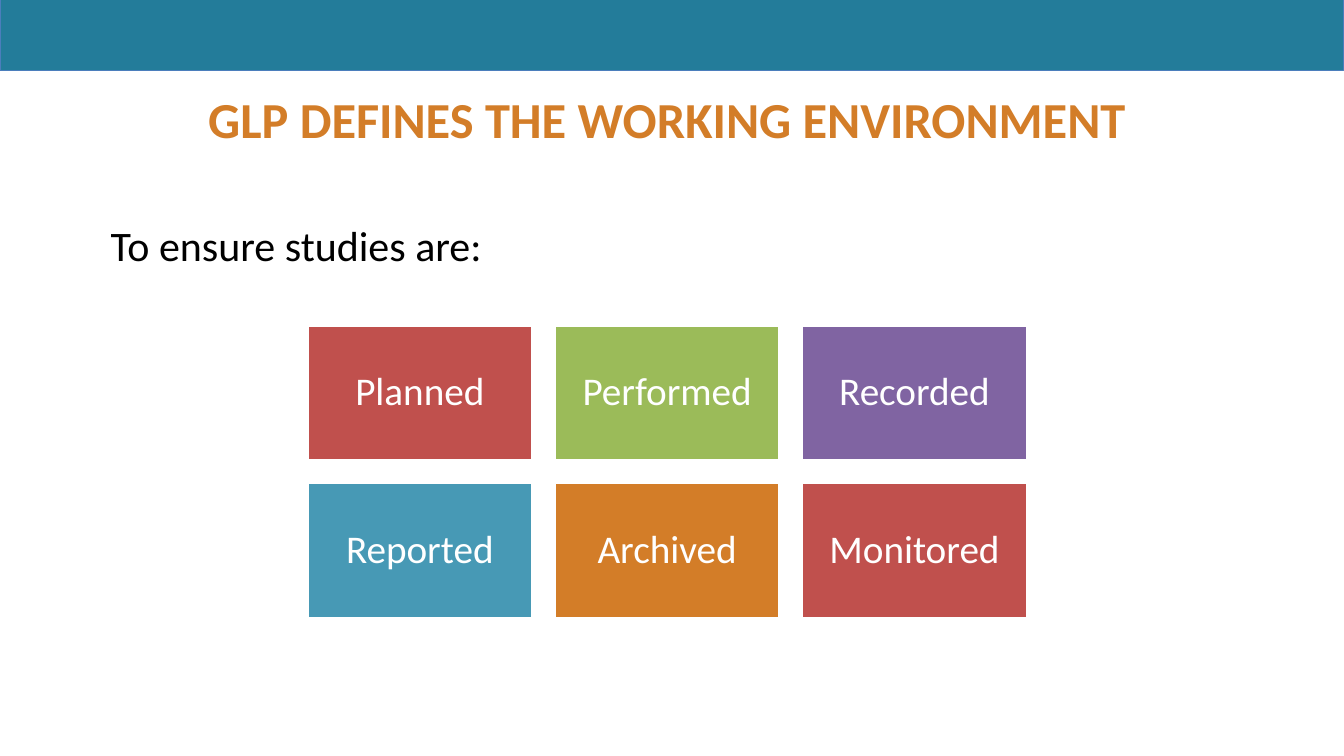
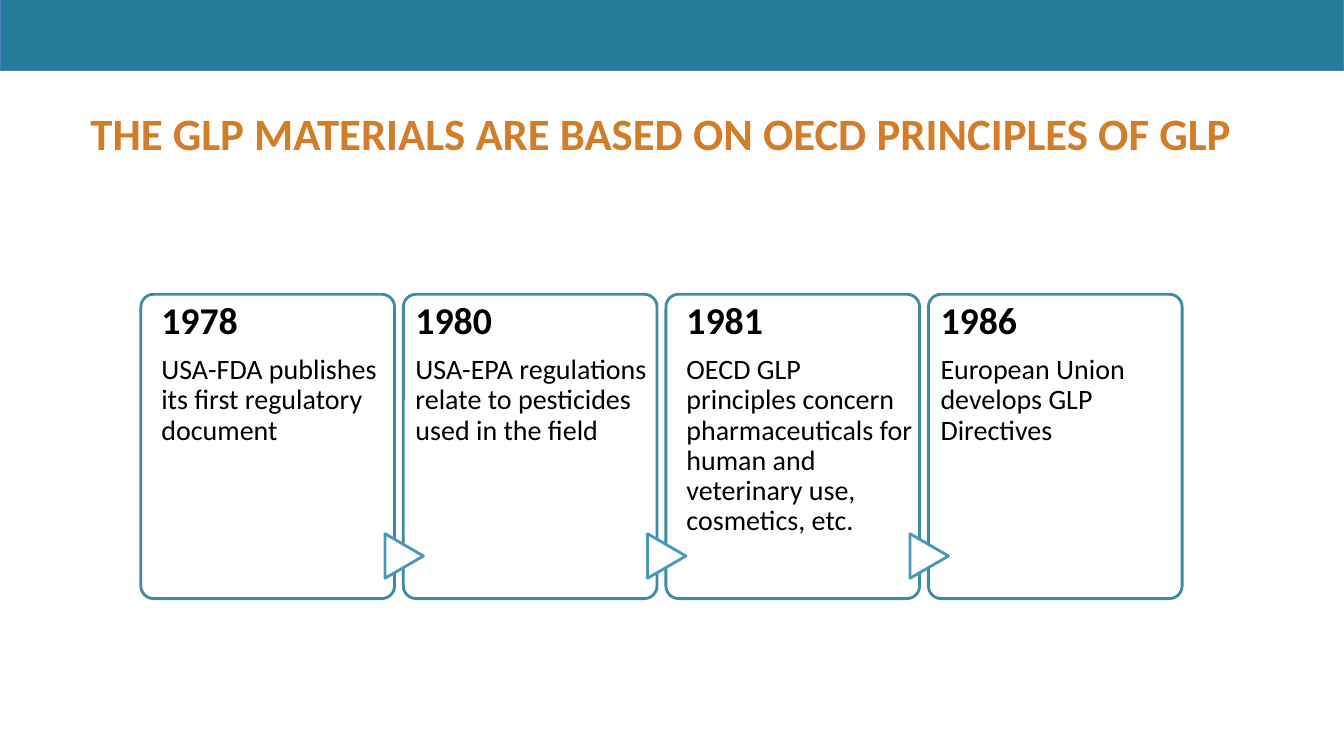
from collections import namedtuple

from pptx import Presentation
from pptx.dml.color import RGBColor
from pptx.enum import shapes, text
from pptx.util import Pt

COLORS = {
    "band": "237C9A",
    "band_line": "4B7EBC",
    "orange": "D37D28",
    "red": "C0504D",
    "green": "9BBB59",
    "purple": "8064A2",
    "blue": "4799B5",
    "card_line": "408BA4",
    "white": "FFFFFF",
    "black": "000000",
}
FONT = "Calibri"
SLIDE_WIDTH, SLIDE_HEIGHT = 960, 540
TITLE_ONLY = 5

Box = namedtuple("Box", "left top width height")


def rgb(name):
    return RGBColor.from_string(COLORS[name])


def set_attributes(target, values):
    for name, value in values.items():
        setattr(target, name, value)


def place(shape, box):
    set_attributes(shape, {name: Pt(value) for name, value in box._asdict().items()})


def format_frame(frame, anchor, insets):
    sides = ("margin_left", "margin_top", "margin_right", "margin_bottom")
    set_attributes(frame, {side: Pt(inset) for side, inset in zip(sides, insets)})
    set_attributes(frame, {
        "word_wrap": True,
        "auto_size": text.MSO_AUTO_SIZE.NONE,
        "vertical_anchor": anchor,
    })


def write(paragraph, content, size, color, bold=False, **layout):
    paragraph.text = content
    set_attributes(paragraph, layout)
    set_attributes(paragraph.font, {"name": FONT, "size": Pt(size), "bold": bold})
    paragraph.font.color.rgb = rgb(color)


def add_box(slide, kind, box, fill, line, line_width):
    shape = slide.shapes.add_shape(kind, *map(Pt, box))
    shape.shadow.inherit = False
    shape.fill.solid()
    shape.fill.fore_color.rgb = rgb(fill)
    shape.line.color.rgb = rgb(line)
    shape.line.width = Pt(line_width)
    return shape


def add_titled_slide(presentation, title, box, size):
    slide = presentation.slides.add_slide(presentation.slide_layouts[TITLE_ONLY])
    add_box(slide, shapes.MSO_SHAPE.RECTANGLE, Box(0, 0, SLIDE_WIDTH, 50.4),
            "band", "band_line", 0.75)
    place(slide.shapes.title, box)
    frame = slide.shapes.title.text_frame
    format_frame(frame, text.MSO_ANCHOR.TOP, (7.2, 3.6, 7.2, 0))
    write(frame.paragraphs[0], title, size, "orange", bold=True,
          alignment=text.PP_ALIGN.CENTER)
    return slide


def add_lead_in(slide, box, content):
    frame = slide.shapes.add_textbox(*map(Pt, box)).text_frame
    format_frame(frame, text.MSO_ANCHOR.TOP, (7.2, 3.6, 7.2, 3.6))
    write(frame.paragraphs[0], content, 30, "black", line_spacing=1.5)


def add_tile_grid(slide, box, tiles, columns=3, gap=16):
    rows = -(-len(tiles) // columns)
    width = (box.width - gap * (columns - 1)) / columns
    height = (box.height - gap * (rows - 1)) / rows
    for index, (label, color) in enumerate(tiles):
        row, column = divmod(index, columns)
        tile_box = Box(box.left + column * (width + gap),
                       box.top + row * (height + gap), width, height)
        tile = add_box(slide, shapes.MSO_SHAPE.RECTANGLE, tile_box, color, "white", 2)
        format_frame(tile.text_frame, text.MSO_ANCHOR.MIDDLE, (8.4,) * 4)
        write(tile.text_frame.paragraphs[0], label, 28, "white",
              alignment=text.PP_ALIGN.CENTER, line_spacing=0.9)


def add_card(slide, box, year, event, left_inset):
    card = add_box(slide, shapes.MSO_SHAPE.ROUNDED_RECTANGLE, box,
                   "white", "card_line", 2)
    card.adjustments[0] = 0.05
    frame = card.text_frame
    format_frame(frame, text.MSO_ANCHOR.TOP, (left_inset, 2.5, 2, 0))
    layout = {"alignment": text.PP_ALIGN.LEFT, "line_spacing": 0.9}
    write(frame.paragraphs[0], year, 27, "black", bold=True,
          space_after=Pt(9.45), **layout)
    write(frame.add_paragraph(), event, 20, "black", **layout)


def add_timeline(slide, box, events, gap=6.3):
    width = (box.width - gap * (len(events) - 1)) / len(events)
    arrow_width, arrow_height = 31.8, 27.4
    for index, (year, event, left_inset) in enumerate(events):
        left = box.left + index * (width + gap)
        add_card(slide, Box(left, box.top, width, box.height), year, event, left_inset)
        if index:
            arrow_box = Box(left - arrow_width / 2 + 0.6,
                            box.top + 0.86 * box.height - arrow_height / 2,
                            arrow_width, arrow_height)
            arrow = add_box(slide, shapes.MSO_SHAPE.FLOWCHART_EXTRACT, arrow_box,
                            "white", "blue", 2)
            arrow.rotation = 90


def build_environment_slide(presentation):
    slide = add_titled_slide(presentation, "GLP DEFINES THE WORKING ENVIRONMENT",
                             Box(44.6, 59, 864, 46.8), 36)
    add_lead_in(slide, Box(72, 135.4, 295.2, 71.3), "To ensure studies are:")
    add_tile_grid(slide, Box(219.6, 232.6, 514, 208.8), [
        ("Planned", "red"),
        ("Performed", "green"),
        ("Recorded", "purple"),
        ("Reported", "blue"),
        ("Archived", "orange"),
        ("Monitored", "red"),
    ])


def build_principles_slide(presentation):
    slide = add_titled_slide(
        presentation, "THE GLP MATERIALS ARE BASED ON OECD PRINCIPLES OF GLP",
        Box(40.3, 72, 864, 82), 32)
    add_timeline(slide, Box(100.6, 210.2, 743.8, 217.4), [
        ("1978", "USA-FDA publishes its first regulatory document", 12),
        ("1980", "USA-EPA regulations relate to pesticides used in the field", 6),
        ("1981", "OECD GLP principles concern pharmaceuticals for human and "
                 "veterinary use, cosmetics, etc.", 12),
        ("1986", "European Union develops GLP Directives", 6),
    ])


def main():
    presentation = Presentation()
    presentation.slide_width = Pt(SLIDE_WIDTH)
    presentation.slide_height = Pt(SLIDE_HEIGHT)
    build_environment_slide(presentation)
    build_principles_slide(presentation)
    presentation.save("out.pptx")


if __name__ == "__main__":
    main()
